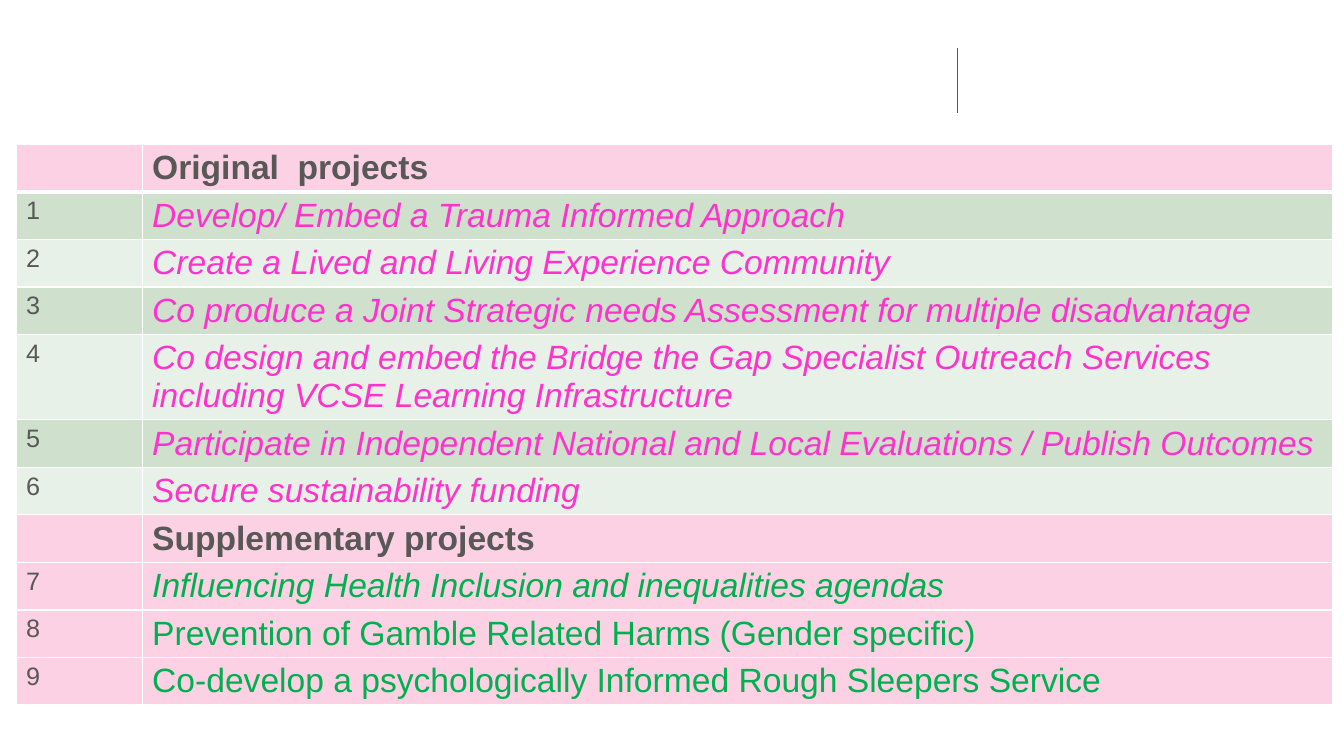
import pptx
import pptx.dml.color
import pptx.enum.shapes
import pptx.oxml
import pptx.oxml.ns
import pptx.util
from lxml import etree

Pt = pptx.util.Pt
qn = pptx.oxml.ns.qn

GREY, PINK, GREEN = "585856", "FF33CC", "00B050"
ROSE, SAGE, MINT, WHITE = "FBD1E3", "CFE1CD", "E8F1E8", "FFFFFF"

FIRST = [
    "Develop/ Embed a Trauma Informed Approach",
    "Create a Lived and Living Experience Community",
    "Co produce a Joint Strategic needs Assessment for multiple disadvantage",
    "Co design and embed the Bridge the Gap Specialist Outreach Services "
    "including VCSE Learning Infrastructure",
    "Participate in Independent National and Local Evaluations / Publish Outcomes",
    "Secure sustainability funding",
]
EXTRA = [
    "Influencing Health Inclusion and inequalities agendas",
    "Prevention of Gamble Related Harms (Gender specific)",
    "Co-develop a psychologically Informed Rough Sleepers Service",
]


def color(code):
    return pptx.dml.color.RGBColor.from_string(code)


class Page:
    font = "Arial"

    def __init__(self, slide):
        self.slide = slide

    def line(self, x1, y1, x2, y2, tint, width):
        kind = pptx.enum.shapes.MSO_CONNECTOR.STRAIGHT
        rule = self.slide.shapes.add_connector(kind, Pt(x1), Pt(y1), Pt(x2), Pt(y2))
        rule.line.color.rgb = color(tint)
        rule.line.width = Pt(width)
        etree.SubElement(rule.element.spPr, qn("a:effectLst"))

    def table(self, x, y, high, cols, rows, step):
        frame = self.slide.shapes.add_table(
            rows, len(cols), Pt(x), Pt(y), Pt(sum(cols)), Pt(high))
        grid = frame.table
        grid.first_row = grid.horz_banding = False
        for col, width in zip(grid.columns, cols):
            col.width = Pt(width)
        for row in grid.rows:
            row.height = Pt(step)
        frame.height = Pt(high)
        return grid

    def cell(self, cell, text, fill, tint, size, bold=False, slant=False, base=1):
        """Fill one cell; base is the width of its bottom border."""
        self.edge(cell, base)
        cell.fill.solid()
        cell.fill.fore_color.rgb = color(fill)
        cell.text_frame.text = text
        for run in cell.text_frame.paragraphs[0].runs:
            font = run.font
            font.name, font.size = self.font, Pt(size)
            font.bold, font.italic = bold, slant
            font.color.rgb = color(tint)

    def edge(self, cell, base):
        """Draw white borders on all four sides."""
        props = cell._tc.get_or_add_tcPr()
        for side in "LRTB":
            width = Pt(base if side == "B" else 1)
            line = etree.SubElement(props, qn("a:ln" + side), w=str(width))
            fill = etree.SubElement(line, qn("a:solidFill"))
            etree.SubElement(fill, qn("a:srgbClr"), val=WHITE)


def main():
    deck = pptx.Presentation()
    deck.slide_width, deck.slide_height = Pt(960), Pt(540)
    page = Page(deck.slides.add_slide(deck.slide_layouts[6]))
    page.line(684, 34.5, 684, 80.5, GREY, 0.5)

    # Each row: number, text, fill, text colour, bold, italic
    rows = [("", "Original  projects", ROSE, GREY, True, False)]
    for num, text in enumerate(FIRST, 1):
        rows.append((str(num), text, SAGE if num % 2 else MINT, PINK, False, True))
    rows.append(("", "Supplementary projects", ROSE, GREY, True, False))
    for num, text in enumerate(EXTRA, len(FIRST) + 1):
        rows.append((str(num), text, ROSE, GREEN, False, text == EXTRA[0]))

    grid = page.table(11.5, 103, 425, [90, 850.5], len(rows), 29.5)
    for i, (num, text, fill, tint, bold, slant) in enumerate(rows):
        base = 1 if i else 3
        page.cell(grid.cell(i, 0), num, fill, GREY, 18, base=base)
        page.cell(grid.cell(i, 1), text, fill, tint, 24, bold, slant, base)

    deck.save("out.pptx")


if __name__ == "__main__":
    main()
